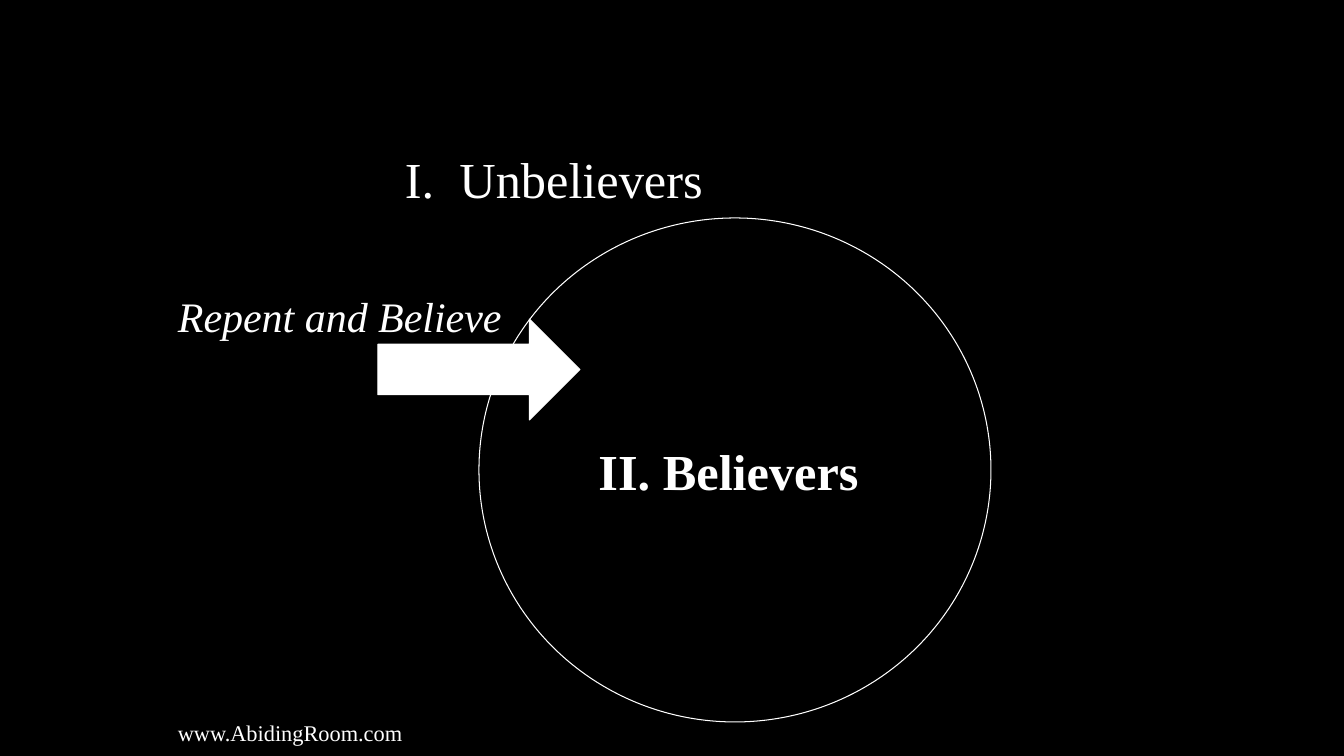
from pptx import Presentation
from pptx.dml.color import RGBColor
from pptx.enum.shapes import MSO_SHAPE
from pptx.enum.text import MSO_ANCHOR, PP_ALIGN
from pptx.util import Pt

EMU_PER_PX = 914400 / 100.8
COLORS = {"background": "000000", "foreground": "FFFFFF"}
FONT = "Times New Roman"


def px(length):
    return round(length * EMU_PER_PX)


def color(name):
    return RGBColor.from_string(COLORS[name])


def write_text(frame, text, size, bold=False, italic=False, align=PP_ALIGN.LEFT):
    paragraph = frame.paragraphs[0]
    paragraph.alignment = align
    run = paragraph.add_run()
    run.text = text
    font = run.font
    font.name, font.size = FONT, Pt(size)
    font.bold, font.italic = bold, italic
    font.color.rgb = color("foreground")


class DiagramSlide:
    """Holds the slide and draws its elements in one white-on-black style."""

    def __init__(self, presentation):
        self.slide = presentation.slides.add_slide(presentation.slide_layouts[6])
        fill = self.slide.background.fill
        fill.solid()
        fill.fore_color.rgb = color("background")

    def shape(self, preset, left, top, width, height, filled=False):
        shape = self.slide.shapes.add_shape(
            preset, px(left), px(top), px(width), px(height))
        shape.shadow.inherit = False
        if filled:
            shape.fill.solid()
            shape.fill.fore_color.rgb = color("foreground")
        else:
            shape.fill.background()
        shape.line.color.rgb = color("foreground")
        shape.line.width = Pt(0.75)
        return shape

    def circle(self, left, top, width, height, text, **text_format):
        frame = self.shape(MSO_SHAPE.OVAL, left, top, width, height).text_frame
        frame.word_wrap = False
        frame.vertical_anchor = MSO_ANCHOR.MIDDLE
        write_text(frame, text, align=PP_ALIGN.CENTER, **text_format)

    def arrow(self, left, top, width, height):
        self.shape(MSO_SHAPE.RIGHT_ARROW, left, top, width, height, filled=True)

    def label(self, left, top, width, height, text, **text_format):
        box = self.slide.shapes.add_textbox(
            px(left), px(top), px(width), px(height))
        box.text_frame.word_wrap = True
        write_text(box.text_frame, text, **text_format)


def main():
    presentation = Presentation()
    presentation.slide_width = px(1344)
    presentation.slide_height = px(756)

    diagram = DiagramSlide(presentation)
    diagram.circle(479, 218, 512, 504, "II. Believers ", size=36, bold=True)
    diagram.label(395, 143, 723, 71, "I.  Unbelievers", size=36)
    diagram.arrow(378, 319, 202, 101)
    diagram.label(168, 286, 370, 60, "Repent and Believe", size=30, italic=True)
    diagram.label(168, 714, 252, 37, "www.AbidingRoom.com", size=16)

    presentation.save("out.pptx")


if __name__ == "__main__":
    main()
